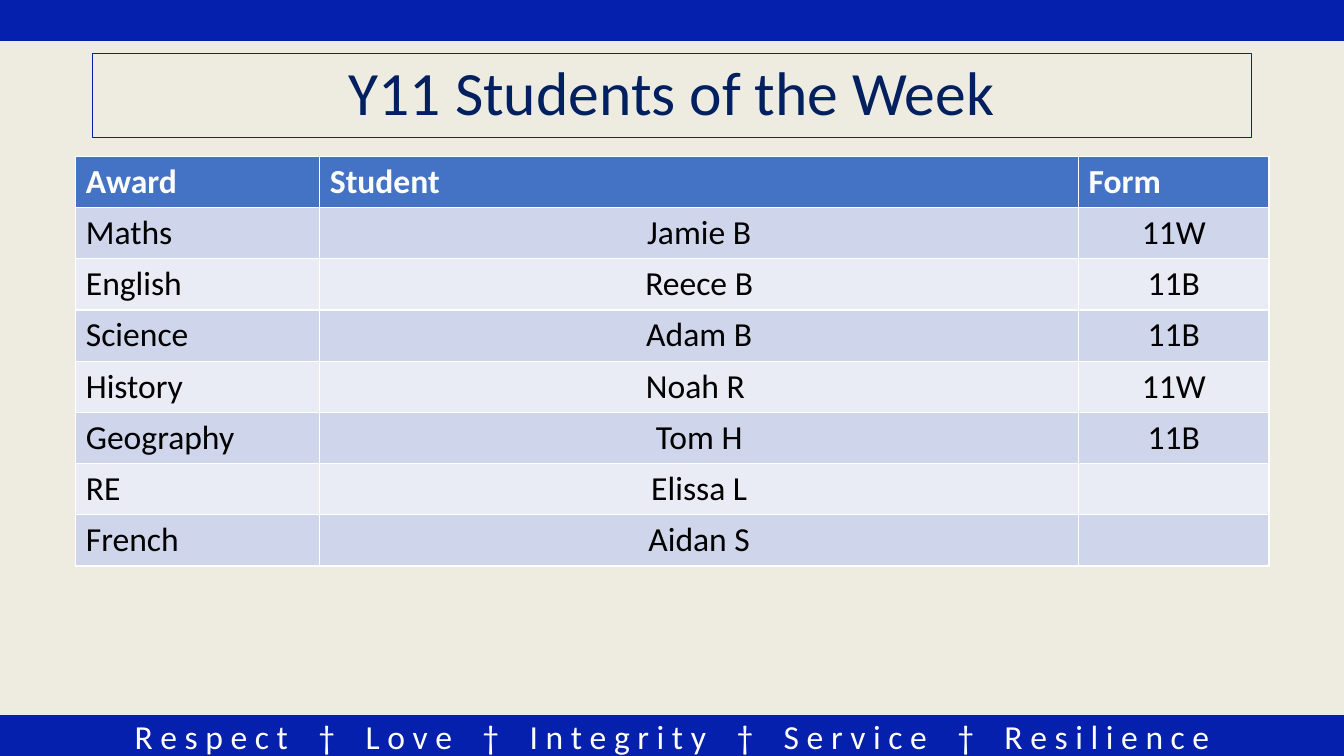
from pptx import Presentation
from pptx.dml.color import RGBColor
from pptx.enum.shapes import MSO_SHAPE
from pptx.enum.text import MSO_ANCHOR as ANCHOR, PP_ALIGN as ALIGN
from pptx.util import Cm, Pt

WIDTH, HEIGHT, BAR_H = 33.87, 19.05, 1.02
BLUE, NAVY, WHITE, BLACK = "0420AC", "002060", "FFFFFF", "000000"
HEADER_FILL, BANDS = "4472C4", ("CFD5EA", "E9EBF5")
VALUES = ("Respect", "Love", "Integrity", "Service", "Resilience")
COLUMN_WIDTHS = (6.15, 19.12, 4.8)
ROW_H = 1.29
AWARDS = (
    ("Award", "Student", "Form"),
    ("Maths", "Jamie B", "11W"),
    ("English", "Reece B", "11B"),
    ("Science", "Adam B", "11B"),
    ("History", "Noah R ", "11W"),
    ("Geography", "Tom H", "11B"),
    ("RE", "Elissa L", ""),
    ("French", "Aidan S", ""),
)


def rgb(value):
    return RGBColor.from_string(value)


def add_text(p, text, size=24, color=BLACK, bold=False, align=None, spacing=None):
    """Add a run; spacing is the extra width of each character in points."""
    if align is not None:
        p.alignment = align
    r = p.add_run()
    r.text = text
    r.font.name = "Calibri"
    r.font.size = Pt(size)
    r.font.bold = bold
    r.font.color.rgb = rgb(color)
    if spacing:
        r.font._element.set("spc", str(round(spacing * 100)))


def add_box(s, left, top, width, height, fill=None, line_width=1):
    sp = s.shapes.add_shape(MSO_SHAPE.RECTANGLE, Cm(left), Cm(top), Cm(width), Cm(height))
    sp.shadow.inherit = False
    if fill:
        sp.fill.solid()
        sp.fill.fore_color.rgb = rgb(fill)
    else:
        sp.fill.background()
    sp.line.color.rgb = rgb(BLUE)
    sp.line.width = Pt(line_width)
    sp.text_frame.word_wrap = True
    sp.text_frame.vertical_anchor = ANCHOR.MIDDLE
    return sp


def add_title(s, left, top, width, height):
    sp = add_box(s, left, top, width, height, line_width=0.75)
    p = sp.text_frame.paragraphs[0]
    p.line_spacing = 0.9
    add_text(p, "Y11 Students of the Week", size=44, color=NAVY, align=ALIGN.CENTER)


def add_values_bar(s, left, top, width, height):
    """Draw the footer with the school values, set apart by daggers."""
    p = add_box(s, left, top, width, height, fill=BLUE).text_frame.paragraphs[0]
    for i, value in enumerate(VALUES):
        if i:
            for text, spacing in ((" ", 16.3), ("†", None), (" ", 16.3)):
                add_text(p, text, color=WHITE, spacing=spacing)
        add_text(p, " ".join(value), color=WHITE, align=ALIGN.CENTER)


def fill_cell(cell, text, row, col):
    is_header = row == 0
    cell.fill.solid()
    cell.fill.fore_color.rgb = rgb(HEADER_FILL if is_header else BANDS[(row - 1) % 2])
    is_centred = not is_header and col > 0
    if is_centred:
        cell.vertical_anchor = ANCHOR.BOTTOM
        cell.margin_left = cell.margin_right = cell.margin_top = Cm(0.03)
        cell.margin_bottom = Cm(0.13)
    if text:
        add_text(cell.text_frame.paragraphs[0], text, bold=is_header,
                 color=WHITE if is_header else BLACK,
                 align=ALIGN.CENTER if is_centred else ALIGN.LEFT)


def add_awards_table(s, left, top):
    table = s.shapes.add_table(len(AWARDS), len(COLUMN_WIDTHS), Cm(left), Cm(top),
                               Cm(sum(COLUMN_WIDTHS)), Cm(ROW_H * len(AWARDS))).table
    for column, width in zip(table.columns, COLUMN_WIDTHS):
        column.width = Cm(width)
    for i, award in enumerate(AWARDS):
        table.rows[i].height = Cm(ROW_H)
        for j, text in enumerate(award):
            fill_cell(table.cell(i, j), text, i, j)


def main():
    prs = Presentation()
    prs.slide_width, prs.slide_height = Cm(WIDTH), Cm(HEIGHT)
    s = prs.slides.add_slide(prs.slide_layouts[6])
    s.background.fill.solid()
    s.background.fill.fore_color.rgb = rgb("EEECE1")
    add_values_bar(s, 0, HEIGHT - BAR_H, WIDTH, BAR_H)
    add_box(s, 0, 0, WIDTH, BAR_H, fill=BLUE)
    add_title(s, 2.33, 1.35, 29.21, 2.11)
    add_awards_table(s, 1.91, 3.94)
    prs.save("out.pptx")


if __name__ == "__main__":
    main()
